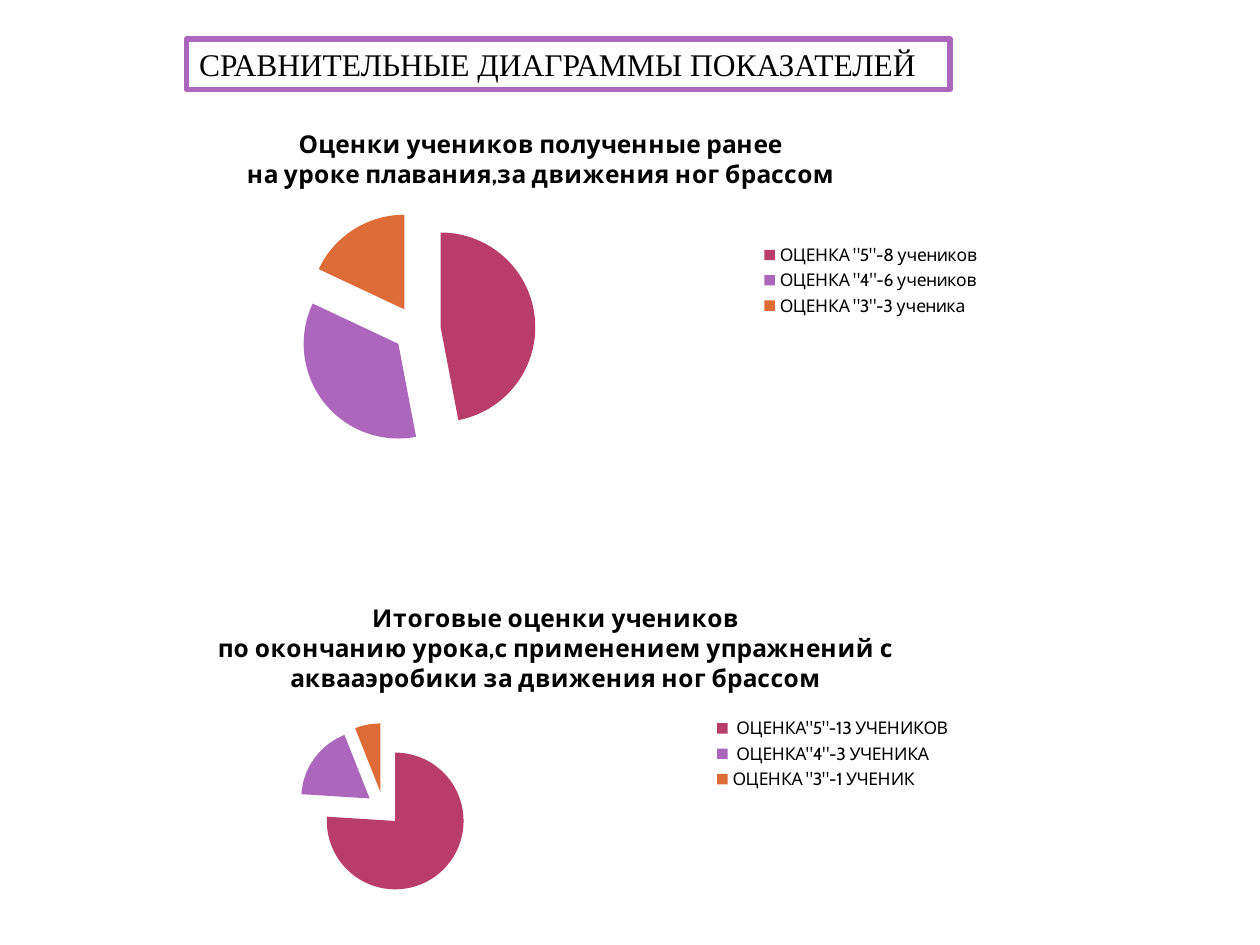
from lxml.etree import SubElement
from pptx import Presentation
from pptx.chart.data import CategoryChartData
from pptx.dml.color import RGBColor
from pptx.enum.chart import XL_CHART_TYPE, XL_LEGEND_POSITION
from pptx.enum.text import MSO_ANCHOR, PP_ALIGN
from pptx.oxml import parse_xml
from pptx.oxml.ns import nsdecls, qn
from pptx.util import Inches, Pt

BLACK = RGBColor(0x00, 0x00, 0x00)
WHITE = RGBColor(0xFF, 0xFF, 0xFF)
CRIMSON = RGBColor(0xB8, 0x3D, 0x68)
PURPLE = RGBColor(0xAC, 0x66, 0xBB)
ORANGE = RGBColor(0xDE, 0x6C, 0x36)
GRADE_COLORS = (CRIMSON, PURPLE, ORANGE)


def format_font(font, name, size, bold=False):
    """Apply the shared black text style."""
    font.name = name
    font.size = Pt(size)
    font.bold = bold
    font.color.rgb = BLACK


def add_heading(page, text):
    """Turn the title placeholder into a framed heading."""
    box = page.shapes.title
    box.left, box.top, box.width, box.height = map(Inches, (1.48, 0.31, 6.06, 0.4))
    box.fill.solid()
    box.fill.fore_color.rgb = WHITE
    box.line.color.rgb = PURPLE
    box.line.width = Pt(3)
    frame = box.text_frame
    frame.text = text
    frame.word_wrap = False
    frame.vertical_anchor = MSO_ANCHOR.MIDDLE
    para = frame.paragraphs[0]
    para.alignment = PP_ALIGN.LEFT
    format_font(para.runs[0].font, "Times New Roman", 18)


def place_part(chart, tag, index, shares):
    """Set the manual layout of a chart part in shares of the chart's size."""
    part = chart.element.find(f".//{qn(tag)}")
    for old in part.findall(qn("c:layout")):
        part.remove(old)
    layout = parse_xml(f"<c:layout {nsdecls('c')}/>")
    manual = SubElement(layout, qn("c:manualLayout"))
    if tag == "c:plotArea":
        SubElement(manual, qn("c:layoutTarget")).set("val", "inner")
    for name in ("xMode", "yMode"):
        SubElement(manual, qn(f"c:{name}")).set("val", "edge")
    for name, share in zip("xywh", shares):
        SubElement(manual, qn(f"c:{name}")).set("val", str(share))
    part.insert(index, layout)


def add_grade_pie(page, place, title, grades, title_at, plot_at, legend_at):
    """Add an exploded pie of grades with its title and legend."""
    data = CategoryChartData()
    data.categories = list(grades)
    data.add_series("Series 1", list(grades.values()))
    frame = page.shapes.add_chart(
        XL_CHART_TYPE.PIE_EXPLODED, *map(Inches, place), data)
    chart = frame.chart
    format_font(chart.font, "Cabin", 10)
    chart.has_title = True
    chart.chart_title.include_in_layout = False
    chart.chart_title.text_frame.text = title
    for para in chart.chart_title.text_frame.paragraphs:
        for span in para.runs:
            format_font(span.font, "Cabin", 14, bold=True)
    chart.has_legend = True
    chart.legend.position = XL_LEGEND_POSITION.RIGHT
    chart.legend.include_in_layout = False
    chart.plots[0].vary_by_categories = True
    chart.plots[0].has_data_labels = False
    for index, color in enumerate(GRADE_COLORS):
        fill = chart.plots[0].series[0].points[index].format.fill
        fill.solid()
        fill.fore_color.rgb = color
    place_part(chart, "c:title", 1, title_at)
    place_part(chart, "c:plotArea", 0, plot_at)
    place_part(chart, "c:legend", 1, legend_at)


def main():
    """Build the slide with two grade charts."""
    deck = Presentation()
    deck.slide_width, deck.slide_height = Inches(10), Inches(7.5)
    page = deck.slides.add_slide(deck.slide_layouts[5])
    add_grade_pie(
        page, (0.62, 0.78, 7.27, 2.89),
        "Оценки учеников полученные ранее\n"
        "на уроке плавания,за движения ног брассом",
        {'ОЦЕНКА "5"-8 учеников': 47,
         'ОЦЕНКА "4"-6 учеников': 35,
         'ОЦЕНКА "3"-3 ученика': 18},
        (0.18, 0.07), (0.24, 0.31, 0.26, 0.65), (0.74, 0.39, 0.25, 0.22))
    add_grade_pie(
        page, (0.39, 4.69, 7.27, 2.56),
        "Итоговые оценки учеников\n"
        "по окончанию урока,с применением упражнений с "
        "аквааэробики за движения ног брассом",
        {' ОЦЕНКА"5"-13 УЧЕНИКОВ': 76,
         ' ОЦЕНКА"4"-3 УЧЕНИКА': 18,
         'ОЦЕНКА "3"-1 УЧЕНИК': 6},
        (0.18, 0.02), (0.27, 0.41, 0.19, 0.53), (0.72, 0.38, 0.27, 0.25))
    add_heading(page, "СРАВНИТЕЛЬНЫЕ ДИАГРАММЫ ПОКАЗАТЕЛЕЙ")
    deck.save("out.pptx")


if __name__ == "__main__":
    main()
